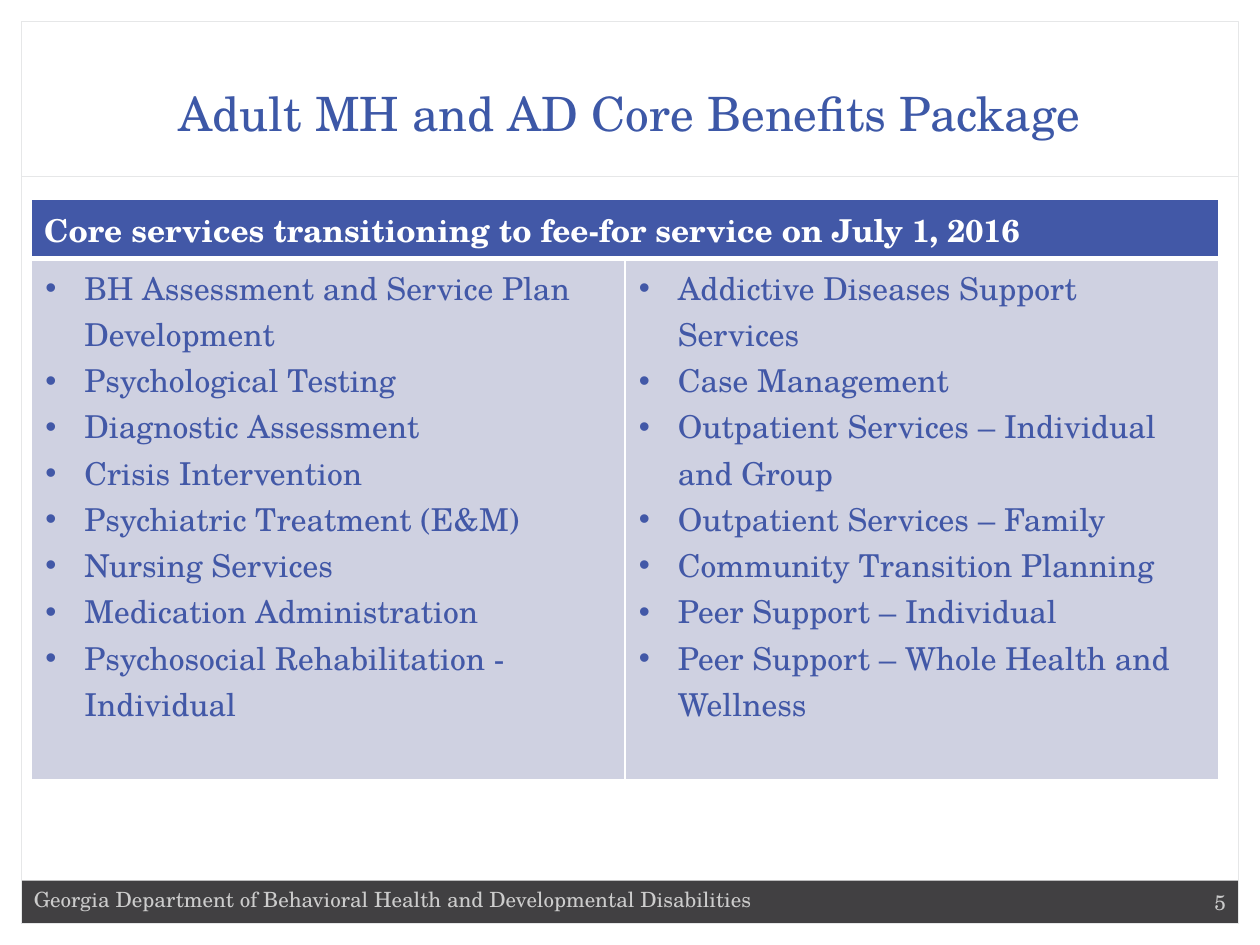
from lxml import etree
from pptx import Presentation
from pptx.dml.color import RGBColor
from pptx.enum import shapes, text
from pptx.oxml import ns
from pptx.util import Inches, Pt

FONT = "TeX Gyre Schola"
BLUE = RGBColor(0x42, 0x58, 0xA7)
TITLE = RGBColor(0x3D, 0x58, 0xA7)
PALE = RGBColor(0xCF, 0xD1, 0xE1)
WHITE = RGBColor(0xFF, 0xFF, 0xFF)
DARK = RGBColor(0x41, 0x40, 0x42)
RULE = RGBColor(0xE6, 0xE7, 0xE8)
GREY = RGBColor(0xCC, 0xCC, 0xCC)

HEAD = "Core services transitioning to fee-for service on July 1, 2016"
LISTS = [
    ["BH Assessment and Service Plan Development", "Psychological Testing",
     "Diagnostic Assessment", "Crisis Intervention",
     "Psychiatric Treatment (E&M)", "Nursing Services",
     "Medication Administration", "Psychosocial Rehabilitation - Individual"],
    ["Addictive Diseases Support Services", "Case Management",
     "Outpatient Services – Individual and Group",
     "Outpatient Services – Family", "Community Transition Planning",
     "Peer Support – Individual", "Peer Support – Whole Health and Wellness"],
]


def write(par, words, size, color, bold=False):
    run = par.add_run()
    run.text = words
    run.font.name = FONT
    run.font.size = Pt(size)
    run.font.bold = bold
    run.font.color.rgb = color


def paint(cell, color, base):
    """Fill a cell and give it white borders; base is the bottom width."""
    cell.fill.solid()
    cell.fill.fore_color.rgb = color
    props = cell._tc.get_or_add_tcPr()
    for spot, (side, wide) in enumerate(zip("LRTB", (1, 1, 1, base))):
        line = etree.Element(ns.qn("a:ln" + side), w=str(Pt(wide)))
        fill = etree.SubElement(line, ns.qn("a:solidFill"))
        etree.SubElement(fill, ns.qn("a:srgbClr"), val=str(WHITE))
        props.insert(spot, line)


deck = Presentation()
deck.slide_width, deck.slide_height = Inches(10), Inches(7.5)
slide = deck.slides.add_slide(deck.slide_layouts[5])
items = slide.shapes

# Footer bar with the page number
bar = items.add_shape(shapes.MSO_SHAPE.RECTANGLE, Inches(0.17), Inches(6.99),
                      Inches(9.66), Inches(0.34))
bar.shadow.inherit = False
bar.fill.solid()
bar.fill.fore_color.rgb = DARK
bar.line.fill.background()
bar.text_frame.vertical_anchor = text.MSO_ANCHOR.MIDDLE
page = bar.text_frame.paragraphs[0]
page.alignment = text.PP_ALIGN.RIGHT
write(page, "5", 12, GREY)

# Frame around the page and rule under the title
frame = items.add_shape(shapes.MSO_SHAPE.RECTANGLE, Inches(0.17), Inches(0.17),
                        Inches(9.66), Inches(7.16))
frame.shadow.inherit = False
frame.fill.background()
rule = items.add_connector(shapes.MSO_CONNECTOR.STRAIGHT, Inches(0.17),
                           Inches(1.4), Inches(9.83), Inches(1.4))
etree.SubElement(rule._element.spPr, ns.qn("a:effectLst"))
for edge in (frame, rule):
    edge.line.color.rgb = RULE
    edge.line.width = Pt(0.75)

# Footer text
foot = items.add_textbox(Inches(0.17), Inches(6.99), Inches(6), Inches(0.3))
foot.text_frame.word_wrap = True
write(foot.text_frame.paragraphs[0],
      "Georgia Department of Behavioral Health and Developmental Disabilities",
      12, GREY)

# Title
title = items.title
title.left, title.top = Inches(0.33), Inches(0)
title.width, title.height = Inches(9.33), Inches(1.17)
title.text_frame.auto_size = text.MSO_AUTO_SIZE.NONE
title.text_frame.vertical_anchor = text.MSO_ANCHOR.BOTTOM
head = title.text_frame.paragraphs[0]
head.alignment = text.PP_ALIGN.CENTER
write(head, "Adult MH and AD Core Benefits Package", 27, TITLE)

# Table: one merged heading above two bulleted columns
table = items.add_table(2, 2, Inches(0.25), Inches(1.58), Inches(9.42),
                        Inches(4.61)).table
table.rows[0].height, table.rows[1].height = Inches(0.47), Inches(4.14)
table.cell(0, 0).merge(table.cell(0, 1))
write(table.cell(0, 0).text_frame.paragraphs[0], HEAD, 18, WHITE, True)

for col, names in enumerate(LISTS):
    table.columns[col].width = Inches(4.71)
    paint(table.cell(0, col), BLUE, 3)
    cell = table.cell(1, col)
    paint(cell, PALE, 1)
    for row, name in enumerate(names):
        body = cell.text_frame
        par = body.add_paragraph() if row else body.paragraphs[0]
        props = par._p.get_or_add_pPr()
        props.set("marL", str(Inches(0.32)))
        props.set("indent", str(Inches(-0.31)))
        etree.SubElement(props, ns.qn("a:buFont"), typeface="Arial")
        etree.SubElement(props, ns.qn("a:buChar"), char="•")
        write(par, name, 18, BLUE)

deck.save("out.pptx")
